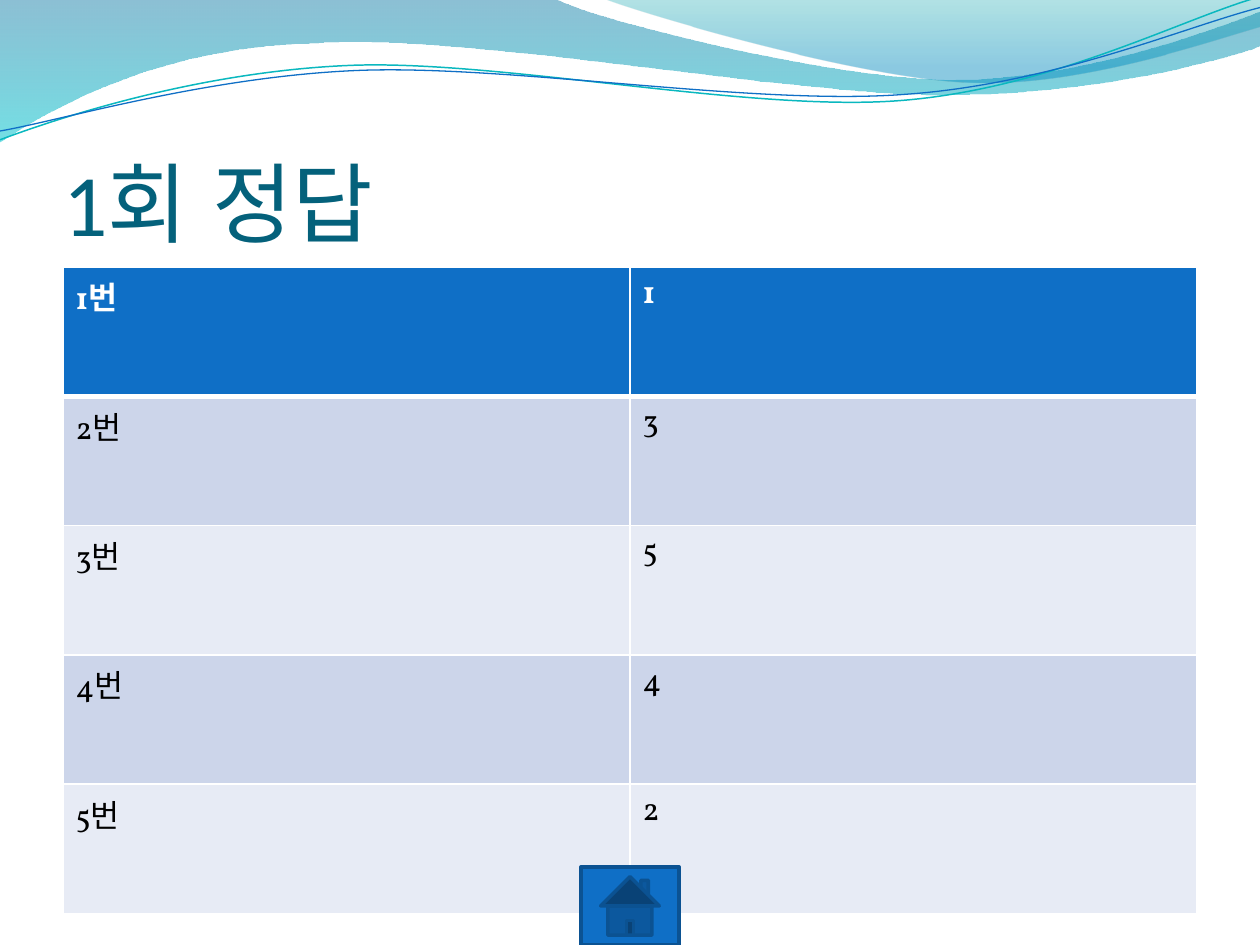
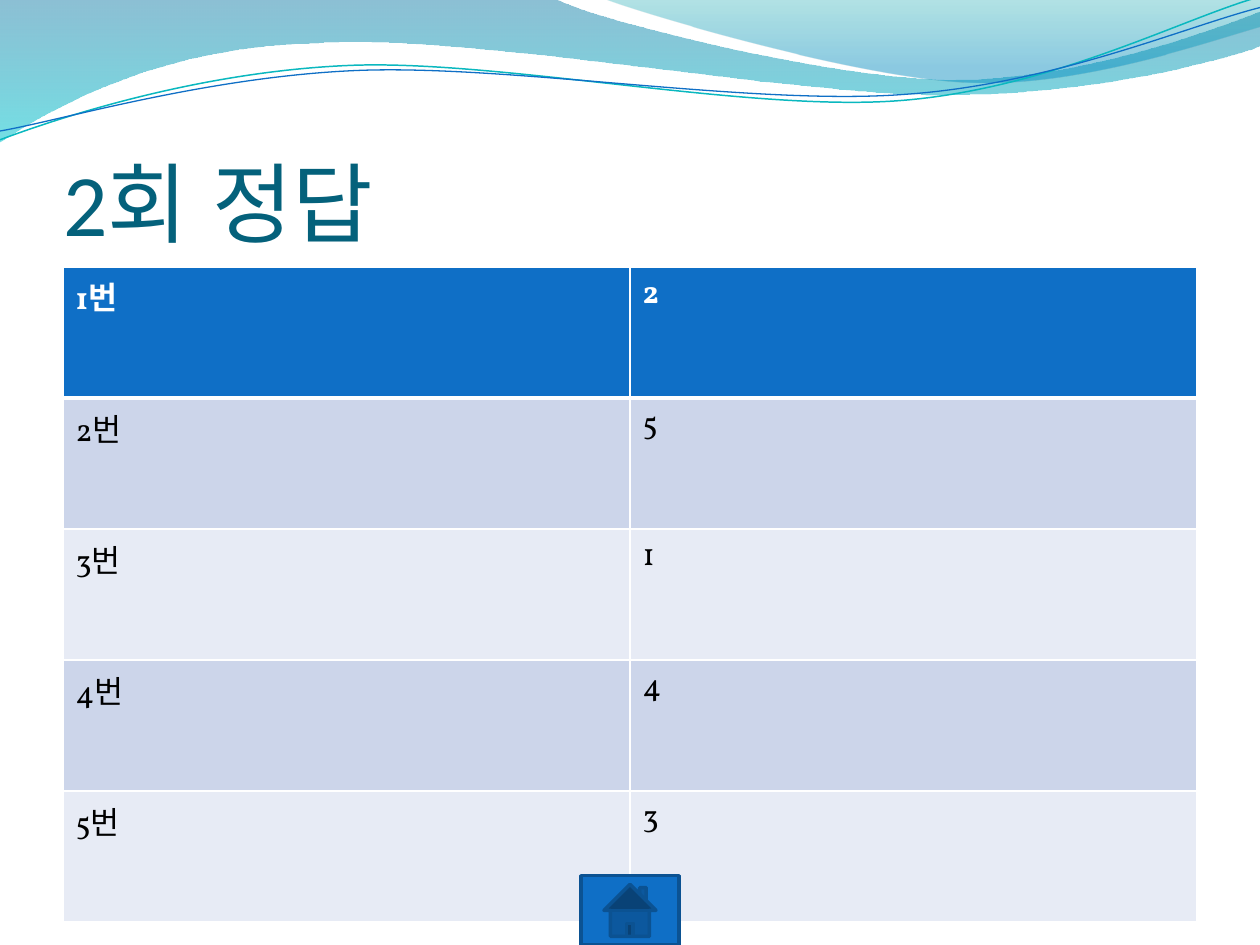
from lxml import etree
from pptx import Presentation
from pptx.dml.color import RGBColor
from pptx.enum.lang import MSO_LANGUAGE_ID
from pptx.enum.shapes import MSO_SHAPE
from pptx.enum.text import MSO_ANCHOR, MSO_AUTO_SIZE, PP_ALIGN
from pptx.oxml.ns import qn
from pptx.util import Inches, Pt

HOME = MSO_SHAPE.ACTION_BUTTON_HOME
BOTTOM = MSO_ANCHOR.BOTTOM
LEFT = PP_ALIGN.LEFT
NO_FIT = MSO_AUTO_SIZE.NONE
KOREAN = MSO_LANGUAGE_ID.KOREAN

COLORS = {
    "title": "04617B",
    "header": "0F6FC6",
    "band_dark": "CCD5EA",
    "band_light": "E7EBF5",
    "white": "FFFFFF",
    "black": "000000",
    "button_line": "0B5292",
    "teal_line": "0AB8BF",
    "wave_blue": "0074A1",
    "wave_cyan": "00C6CF",
    "crest_teal": "00A1A9",
    "crest_blue": "008BBF",
}
TITLE_FONT, TABLE_FONT = "Calibri", "Vollkorn"
SLIDE_W, SLIDE_H = 10, 7.5
MARGIN, TABLE_TOP = 0.5, 2.12
CONTENT_W = SLIDE_W - 2 * MARGIN
BUTTON_W = 0.78

ANSWERS = [
    {"title": "1회 정답", "answers": [1, 3, 5, 4, 2], "table_h": 5.13, "button_h": 0.62},
    {"title": "2회 정답", "answers": [2, 5, 1, 4, 3], "table_h": 5.2, "button_h": 0.55},
]

WAVES = [
    {"start": (0, 0),
     "segments": [(4.4, -0.01), (4.76, 0.17, 6.64, 0.63, 7.58, 0.63),
                  (8.53, 0.63, 9.58, 0.26, 10, 0.09), (10.01, 0.36),
                  (9.83, 0.44, 8.7, 0.76, 7.46, 0.75),
                  (6.22, 0.75, 3.82, 0.28, 2.57, 0.34),
                  (1.29, 0.36, 0.46, 0.83, -0.01, 1.13), (0, 0)],
     "gradient": [(0, "wave_blue", 45), (1, "wave_cyan", 55)]},
    {"start": (4.79, -0.01),
     "segments": [(5.09, 0.11, 6.82, 0.62, 7.69, 0.65),
                  (8.56, 0.69, 9.61, 0.32, 10, 0.21), (10, 0), (4.79, -0.01)],
     "gradient": [(0, "crest_teal", 30), (0.8, "crest_blue", 45)]},
    {"start": (0, 1.11),
     "segments": [(0.48, 0.93, 1.58, 0.57, 2.77, 0.52),
                  (3.95, 0.47, 5.93, 0.89, 7.13, 0.8),
                  (8.33, 0.71, 9.38, 0.15, 9.98, -0.02)],
     "line": ("teal_line", 0.85)},
    {"start": (0, 1.04),
     "segments": [(0.47, 0.96, 1.64, 0.61, 2.83, 0.56),
                  (4.03, 0.51, 5.97, 0.84, 7.17, 0.75),
                  (8.36, 0.67, 9.41, 0.21, 10, 0.06)],
     "line": ("header", 0.75)},
]


def rgb(name):
    return RGBColor.from_string(COLORS[name])


def bend_segments(sp, segments):
    lines = list(sp.element.iter(qn("a:lnTo")))
    for line, seg in zip(lines, segments):
        if len(seg) == 2:
            continue
        curve = etree.Element(qn("a:cubicBezTo"))
        for x, y in zip(seg[::2], seg[1::2]):
            etree.SubElement(curve, qn("a:pt"),
                             x=str(Inches(x) - sp.left), y=str(Inches(y) - sp.top))
        line.getparent().replace(line, curve)


def add_wave(slide, wave):
    segments = wave["segments"]
    x, y = wave["start"]
    builder = slide.shapes.build_freeform(Inches(x), Inches(y))
    builder.add_line_segments(
        [(Inches(seg[-2]), Inches(seg[-1])) for seg in segments], close="gradient" in wave)
    sp = builder.convert_to_shape()
    bend_segments(sp, segments)
    sp.shadow.inherit = False
    if "line" in wave:
        color, width = wave["line"]
        sp.fill.background()
        sp.line.color.rgb = rgb(color)
        sp.line.width = Pt(width)
        return sp
    sp.line.fill.background()
    sp.fill.gradient()
    sp.fill.gradient_angle = 270
    for stop, (position, color, _) in zip(sp.fill.gradient_stops, wave["gradient"]):
        stop.position = position
        stop.color.rgb = rgb(color)
    stops = list(sp.element.iter(qn("a:srgbClr")))
    for clr, (_, _, opacity) in zip(stops, wave["gradient"]):
        etree.SubElement(clr, qn("a:alpha"), val=str(opacity * 1000))
    return sp


def add_waves_to_layout(slide):
    tree = slide.slide_layout.shapes.element
    for i, wave in enumerate(WAVES):
        tree.insert(2 + i, add_wave(slide, wave).element)


def set_title(slide, text):
    title = slide.shapes.title
    title.left, title.top = Inches(MARGIN), Inches(0.77)
    title.width, title.height = Inches(CONTENT_W), Inches(1.25)
    tf = title.text_frame
    tf.text = text
    tf.auto_size = NO_FIT
    tf.vertical_anchor = BOTTOM
    tf.margin_left = tf.margin_right = tf.margin_bottom = 0
    tf.margin_top = Inches(0.05)
    p = tf.paragraphs[0]
    p.alignment = LEFT
    p.font.name, p.font.size = TITLE_FONT, Pt(50)
    p.font.color.rgb = rgb("title")
    p.runs[0].font.language_id = KOREAN


def set_borders(cell, row):
    widths = {"L": 1, "R": 1, "T": 3 if row == 1 else 1, "B": 3 if row == 0 else 1}
    for side, width in widths.items():
        ln = etree.SubElement(cell._tc.get_or_add_tcPr(), qn(f"a:ln{side}"), w=str(Pt(width)))
        fill = etree.SubElement(ln, qn("a:solidFill"))
        etree.SubElement(fill, qn("a:srgbClr"), val=COLORS["white"])


def format_cell(cell, text, row):
    header = row == 0
    band = "header" if header else "band_dark" if row % 2 else "band_light"
    set_borders(cell, row)
    cell.fill.solid()
    cell.fill.fore_color.rgb = rgb(band)
    cell.text = text
    p = cell.text_frame.paragraphs[0]
    p.font.name, p.font.size, p.font.bold = TABLE_FONT, Pt(18), header
    p.font.color.rgb = rgb("white" if header else "black")


def add_answer_table(slide, answers, height):
    table = slide.shapes.add_table(
        len(answers), 2, Inches(MARGIN), Inches(TABLE_TOP), Inches(CONTENT_W), Inches(height)
    ).table
    for row, answer in enumerate(answers):
        for col, text in enumerate((f"{row + 1}번", str(answer))):
            format_cell(table.cell(row, col), text, row)


def add_home_button(slide, height):
    sp = slide.shapes.add_shape(
        HOME, Inches((SLIDE_W - BUTTON_W) / 2), Inches(SLIDE_H - height),
        Inches(BUTTON_W), Inches(height))
    sp.shadow.inherit = False
    sp.fill.solid()
    sp.fill.fore_color.rgb = rgb("header")
    sp.line.color.rgb = rgb("button_line")
    sp.line.width = Pt(2)


def main():
    prs = Presentation()
    prs.slide_width, prs.slide_height = Inches(SLIDE_W), Inches(SLIDE_H)
    layout = prs.slide_layouts[5]
    for i, sheet in enumerate(ANSWERS):
        slide = prs.slides.add_slide(layout)
        if i == 0:
            add_waves_to_layout(slide)
        set_title(slide, sheet["title"])
        add_answer_table(slide, sheet["answers"], sheet["table_h"])
        add_home_button(slide, sheet["button_h"])
    prs.save("out.pptx")


if __name__ == "__main__":
    main()
